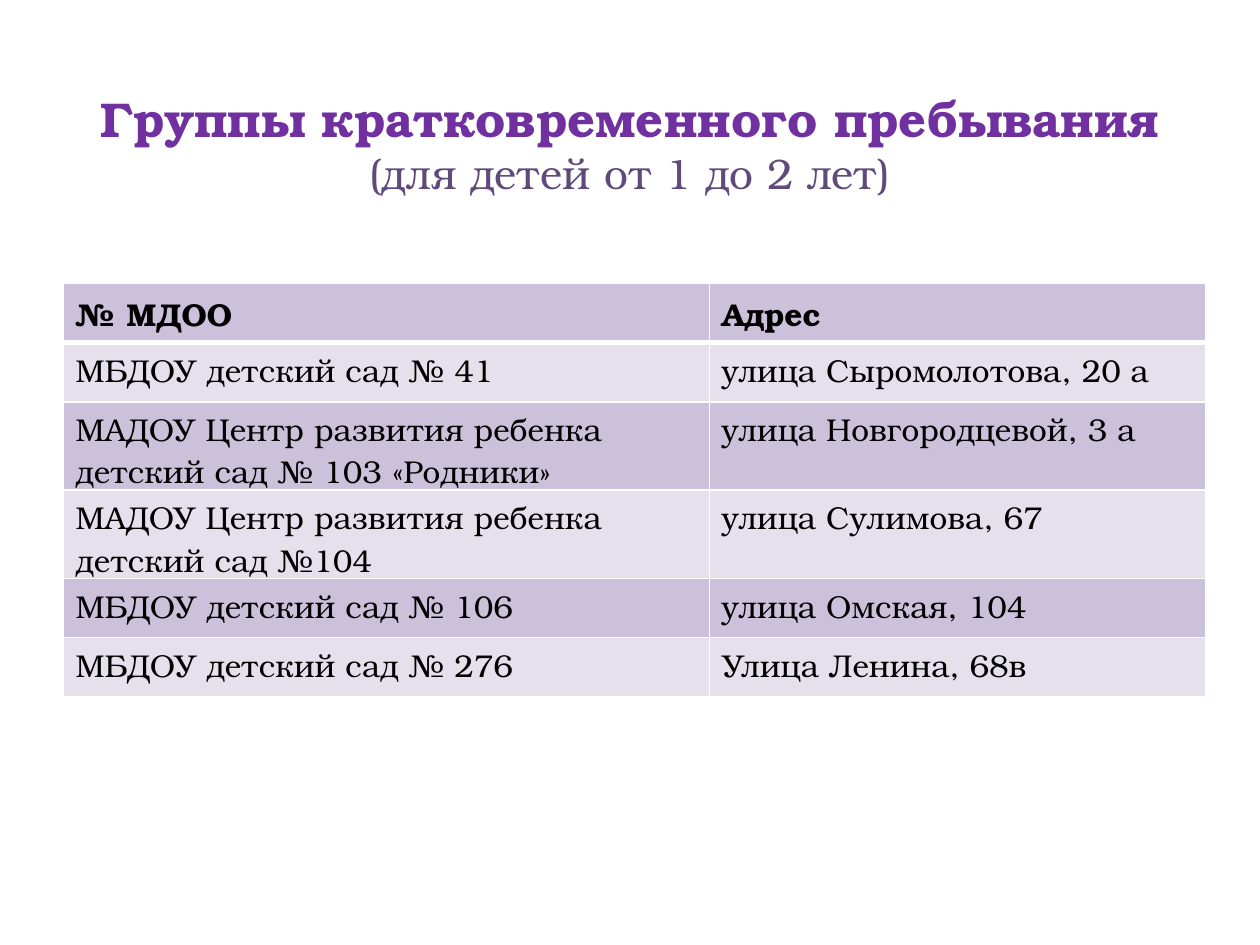
from lxml import etree
from pptx import Presentation
from pptx import util as u
from pptx.dml.color import RGBColor
from pptx.enum import text
from pptx.oxml.ns import qn

FONT = "TeX Gyre Bonum"
BANDS = ("CCC1DA", "E6E0EC")
COLUMN_WIDTHS = (5.13, 3.94)
ROW_HEIGHT = 0.47
ROWS = (
    ("№ МДОО", "Адрес"),
    ("МБДОУ детский сад № 41", "улица Сыромолотова, 20 а"),
    ("МАДОУ Центр развития ребенка детский сад № 103 «Родники»",
     "улица Новгородцевой, 3 а"),
    ("МАДОУ Центр развития ребенка детский сад №104", "улица Сулимова, 67"),
    ("МБДОУ детский сад № 106", "улица Омская, 104"),
    ("МБДОУ детский сад № 276", "Улица Ленина, 68в"),
)


def color(value):
    return RGBColor.from_string(value)


def add_span(para, words, size, shade, bold=False):
    span = para.add_run()
    span.text = words
    span.font.name = FONT
    span.font.size = u.Pt(size)
    span.font.bold = bold
    span.font.color.rgb = color(shade)


def add_title(page):
    box = page.shapes.add_textbox(
        u.Inches(0.5), u.Inches(0.3), u.Inches(9), u.Inches(1.25))
    frame = box.text_frame
    frame.word_wrap = True
    frame.vertical_anchor = text.MSO_ANCHOR.MIDDLE
    frame.margin_top = u.Inches(0.48)
    para = frame.paragraphs[0]
    para.alignment = text.PP_ALIGN.CENTER
    add_span(para, "Группы кратковременного пребывания", 27.9, "7030A0", True)
    para.add_line_break()
    add_span(para, "(для детей от 1 до 2 лет)", 24.3, "604A7B")


def add_border(cell, side, width):
    properties = cell._tc.get_or_add_tcPr()
    line = etree.SubElement(properties, qn(f"a:ln{side}"), w=str(u.Pt(width)))
    fill = etree.SubElement(line, qn("a:solidFill"))
    etree.SubElement(fill, qn("a:srgbClr"), val="FFFFFF")


def style_cell(cell, row):
    widths = {"L": 1, "R": 1, "T": 3 if row == 1 else 1, "B": 3 if row == 0 else 1}
    for side, width in widths.items():
        add_border(cell, side, width)
    cell.fill.solid()
    cell.fill.fore_color.rgb = color(BANDS[row % 2])


def add_address_table(page):
    table = page.shapes.add_table(
        len(ROWS), len(COLUMN_WIDTHS), u.Inches(0.5), u.Inches(2.25),
        u.Inches(sum(COLUMN_WIDTHS)), u.Inches(ROW_HEIGHT * len(ROWS))).table
    table.first_row = table.horz_banding = False
    for column, width in zip(table.columns, COLUMN_WIDTHS):
        column.width = u.Inches(width)
    for row, entries in enumerate(ROWS):
        table.rows[row].height = u.Inches(ROW_HEIGHT)
        for column, words in enumerate(entries):
            cell = table.cell(row, column)
            style_cell(cell, row)
            add_span(cell.text_frame.paragraphs[0], words, 18, "000000", row == 0)


def main():
    deck = Presentation()
    deck.slide_width = u.Inches(10)
    deck.slide_height = u.Inches(7.5)
    page = deck.slides.add_slide(deck.slide_layouts[6])
    add_title(page)
    add_address_table(page)
    deck.save("out.pptx")


if __name__ == "__main__":
    main()
